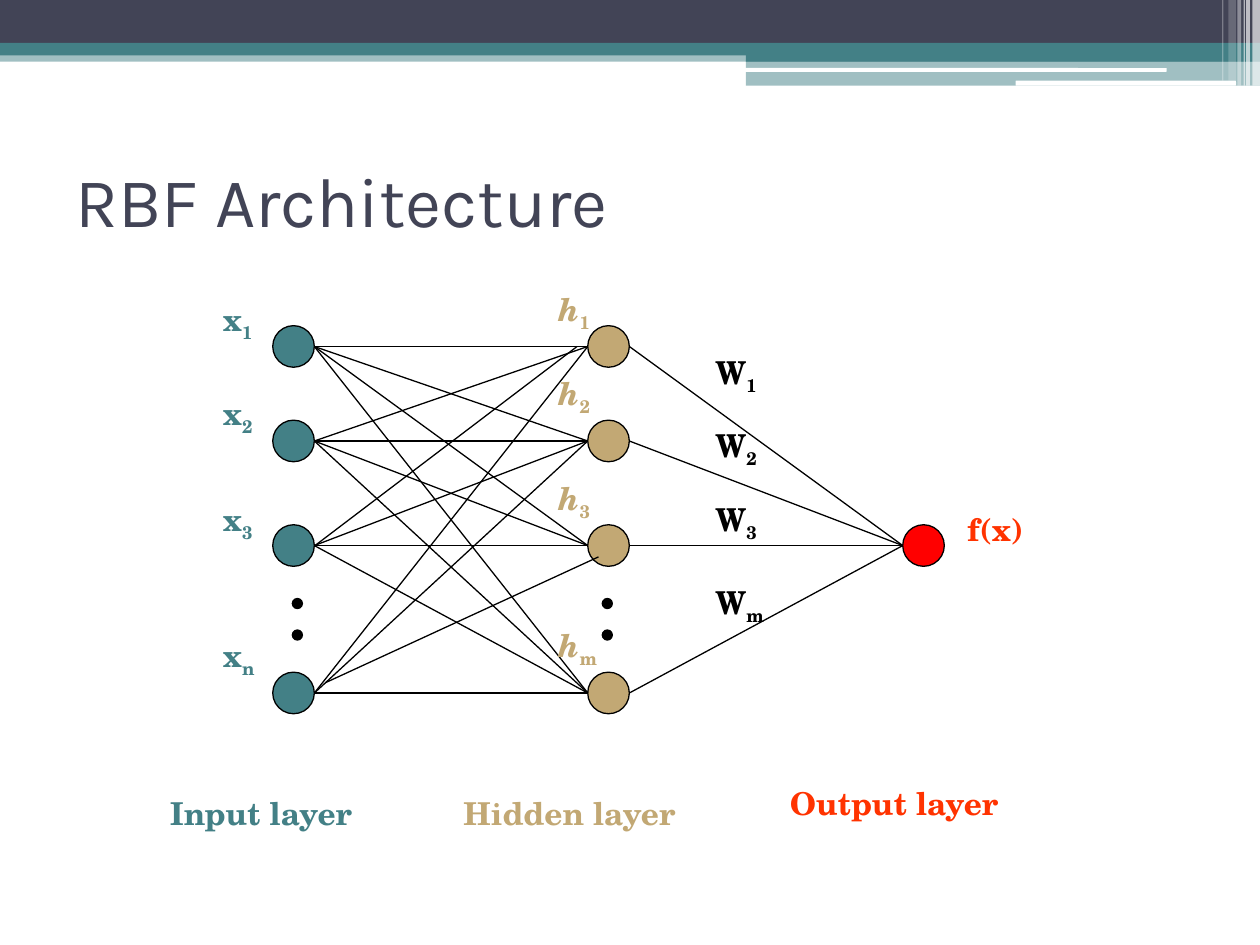
from lxml import etree
from pptx import Presentation
from pptx.dml.color import RGBColor
from pptx.enum.shapes import MSO_CONNECTOR, MSO_SHAPE
from pptx.enum.text import MSO_ANCHOR, MSO_AUTO_SIZE, PP_ALIGN
from pptx.oxml.ns import qn
from pptx.util import Inches, Pt

RECT, ROUND, OVAL = MSO_SHAPE.RECTANGLE, MSO_SHAPE.ROUNDED_RECTANGLE, MSO_SHAPE.OVAL
STRAIGHT = MSO_CONNECTOR.STRAIGHT
LEFT, MIDDLE = PP_ALIGN.LEFT, MSO_ANCHOR.MIDDLE
GROW = MSO_AUTO_SIZE.SHAPE_TO_FIT_TEXT

NAVY = RGBColor(0x42, 0x44, 0x56)
TEAL = RGBColor(0x43, 0x80, 0x86)
TAN = RGBColor(0xC2, 0xA8, 0x74)
RED = RGBColor(0xFF, 0x00, 0x00)
ORANGE = RGBColor(0xFF, 0x33, 0x00)
BLACK = RGBColor(0x00, 0x00, 0x00)
WHITE = RGBColor(0xFF, 0xFF, 0xFF)


class Deck:
    title_font, body_font = "Karla", "TeX Gyre Schola"
    title_size, body_size, line_width = Pt(40), Pt(18), Pt(0.75)

    def __init__(self, slide):
        self.s = slide

    def run(self, p, text, font, size, color, bold=False, italic=False):
        r = p.add_run()
        r.text = text
        f = r.font
        f.name, f.size, f.bold, f.italic = font, size, bold, italic
        f.color.rgb = color
        return r

    def title(self, text, x, y, w, h):
        sp = self.s.shapes.title
        sp.left, sp.top, sp.width, sp.height = map(Inches, (x, y, w, h))
        tf = sp.text_frame
        tf.vertical_anchor = MIDDLE
        p = tf.paragraphs[0]
        p.alignment = LEFT
        self.run(p, text, self.title_font, self.title_size, NAVY)

    def shape(self, kind, x, y, w, h, color, alpha=100, outlined=False):
        sp = self.s.shapes.add_shape(kind, *map(Inches, (x, y, w, h)))
        sp.shadow.inherit = False
        sp.fill.solid()
        sp.fill.fore_color.rgb = color
        if alpha < 100:
            clr = sp._element.spPr.find(qn("a:solidFill"))[0]
            etree.SubElement(clr, qn("a:alpha")).set("val", str(alpha * 1000))
        if outlined:
            sp.line.color.rgb = BLACK
            sp.line.width = self.line_width
        else:
            sp.line.fill.background()

    def circle(self, cx, cy, d, color):
        self.shape(OVAL, cx - d / 2, cy - d / 2, d, d, color, outlined=True)

    def line(self, start, end):
        c = self.s.shapes.add_connector(STRAIGHT, *map(Inches, (*start, *end)))
        c.line.color.rgb = BLACK
        c.line.width = self.line_width
        etree.SubElement(c._element.spPr, qn("a:effectLst"))

    def label(self, text, x, y, w, color, sub="", italic=False):
        sp = self.s.shapes.add_textbox(*map(Inches, (x, y, w, 0.5)))
        tf = sp.text_frame
        tf.word_wrap = True
        tf.auto_size = GROW
        p = tf.paragraphs[0]
        style = (self.body_font, self.body_size, color, True)
        self.run(p, text, *style, italic)
        if sub:
            r = self.run(p, sub, *style)
            r.font._element.set("baseline", "-25000")


prs = Presentation()
prs.slide_width, prs.slide_height = Inches(10), Inches(7.5)
deck = Deck(prs.slides.add_slide(prs.slide_layouts[5]))

# Header bands
for kind, *box, color, alpha in (
    (RECT, 0, 0.4, 10, 0.09, TEAL, 50),
    (RECT, 0, 0, 10, 0.34, NAVY, 100),
    (RECT, 0, 0.34, 10, 0.1, TEAL, 100),
    (RECT, 5.92, 0.39, 4.08, 0.1, TEAL, 100),
    (RECT, 5.92, 0.48, 4.08, 0.2, TEAL, 50),
    (ROUND, 5.91, 0.54, 3.35, 0.03, WHITE, 100),
    (ROUND, 8.06, 0.64, 1.75, 0.04, WHITE, 100),
):
    deck.shape(kind, *box, color, alpha)

# Pale stripes at the right end of the header
for x, w, h, alpha in ((9.94, 0.06, 0.68, 65), (9.89, 0.03, 0.68, 65),
                       (9.87, 0.01, 0.68, 60), (9.82, 0.03, 0.68, 40),
                       (9.75, 0.06, 0.64, 20), (9.7, 0.01, 0.64, 30)):
    deck.shape(RECT, x, 0, w, h, WHITE, alpha)

deck.title("RBF Architecture", 0.5, 1, 9, 1.17)

# Layer captions
deck.label("Input layer", 1.25, 6.25, 1.92, TEAL)
deck.label("Hidden layer", 3.58, 6.25, 2.42, TAN)
deck.label("Output layer", 6.17, 6.17, 2.58, ORANGE)

# Neurons
D = 0.33
R = D / 2
IN_X, HID_X, OUT_X = 2.33, 4.83, 7.33
ROWS = (2.75, 3.5, 4.33, 5.5)
OUT_Y = ROWS[2]
for x, color in ((IN_X, TEAL), (HID_X, TAN)):
    for y in ROWS:
        deck.circle(x, y, D, color)
deck.circle(OUT_X, OUT_Y, D, RED)

# Connections: every input to every hidden neuron, two of them ending off-centre
OFFSET_ENDS = {(2, 0): ((2.5, 4.33), (4.58, 2.75)),
               (3, 2): ((2.58, 5.42), (4.75, 4.42))}
for i, y1 in enumerate(ROWS):
    for j, y2 in enumerate(ROWS):
        ends = ((IN_X + R, y1), (HID_X - R, y2))
        deck.line(*OFFSET_ENDS.get((i, j), ends))
for y in ROWS:
    deck.line((HID_X + R, y), (OUT_X - R, OUT_Y))

# Continuation dots
for x in (2.36, 4.82):
    for y in (4.79, 5.04):
        deck.circle(x, y, 0.08, BLACK)

# Neuron and weight labels
for text, x, w, color, italic, subs, tops in (
    ("x", 1.67, 0.67, TEAL, False, "123n", (2.33, 3.08, 3.92, 5)),
    ("h", 4.33, 0.67, TAN, True, "123m", (2.25, 2.92, 3.75, 4.92)),
    ("W", 5.58, 0.75, BLACK, False, "123m", (2.75, 3.33, 3.92, 4.58)),
):
    for sub, y in zip(subs, tops):
        deck.label(text, x, y, w, color, sub, italic)
deck.label("f(x)", 7.58, 4, 0.83, ORANGE)

prs.save("out.pptx")
